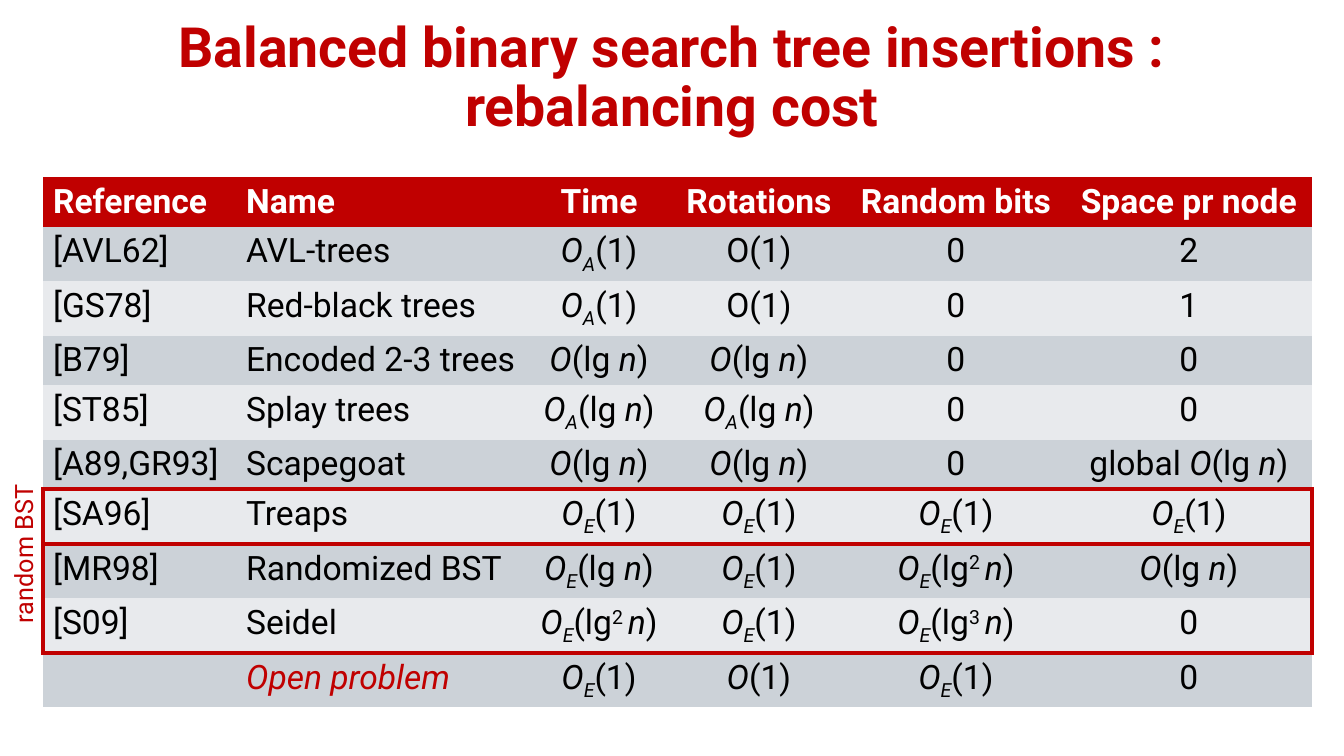
import pptx
import pptx.dml.color
import pptx.enum.text
import pptx.oxml
import pptx.oxml.ns
import pptx.util

PX = 914400 / 100.8
FONT = "Roboto"
RED = pptx.dml.color.RGBColor(0xC0, 0x00, 0x00)
WHITE = pptx.dml.color.RGBColor(0xFF, 0xFF, 0xFF)
BLACK = pptx.dml.color.RGBColor(0x00, 0x00, 0x00)
DARK_BAND = pptx.dml.color.RGBColor(0xCC, 0xD2, 0xD8)
LIGHT_BAND = pptx.dml.color.RGBColor(0xE8, 0xEA, 0xED)
CENTER = pptx.enum.text.PP_ALIGN.CENTER
MIDDLE = pptx.enum.text.MSO_ANCHOR.MIDDLE
NO_GRID_STYLE = "{2D5ABB26-0587-4C30-8999-92F81FD0307C}"

COLUMN_WIDTHS = [193, 290, 146, 174, 220, 246]
ROW_HEIGHT = 41
RANDOM_ROWS = range(6, 9)


def px(length):
    return pptx.util.Emu(round(length * PX))


def bound(argument="1", model="", power=""):
    runs = [("O", True, 0)]
    if model:
        runs.append((model, True, -25))
    if argument == "1":
        return runs + [("(1)", False, 0)]
    if power:
        runs += [("(lg", False, 0), (power + " ", False, 30)]
    else:
        runs.append(("(lg ", False, 0))
    return runs + [("n", True, 0), (")", False, 0)]


AMORTIZED = bound("1", "A")
EXPECTED = bound("1", "E")
LOG = bound("lg n")
AMORTIZED_LOG = bound("lg n", "A")
EXPECTED_LOG = bound("lg n", "E")
EXPECTED_LOG2 = bound("lg n", "E", "2")
EXPECTED_LOG3 = bound("lg n", "E", "3")

COSTS = [
    ["Reference", "Name", "Time", "Rotations", "Random bits", "Space pr node"],
    ["[AVL62]", "AVL-trees", AMORTIZED, "O(1)", "0", "2"],
    ["[GS78]", "Red-black trees", AMORTIZED, "O(1)", "0", "1"],
    ["[B79]", "Encoded 2-3 trees", LOG, LOG, "0", "0"],
    ["[ST85]", "Splay trees", AMORTIZED_LOG, AMORTIZED_LOG, "0", "0"],
    ["[A89,GR93]", "Scapegoat", LOG, LOG, "0", [("global ", False, 0)] + LOG],
    ["[SA96]", "Treaps", EXPECTED, EXPECTED, EXPECTED, EXPECTED],
    ["[MR98]", "Randomized BST", EXPECTED_LOG, EXPECTED, EXPECTED_LOG2, LOG],
    ["[S09]", "Seidel", EXPECTED_LOG2, EXPECTED, EXPECTED_LOG3, "0"],
    ["", [("Open problem", True, 0)], EXPECTED, bound(), EXPECTED, "0"],
]


def add_run(paragraph, text, size, color, bold=False, italic=False, baseline=0):
    run = paragraph.add_run()
    run.text = text
    font = run.font
    font.name, font.size = FONT, pptx.util.Pt(size)
    font.bold, font.italic = bold, italic
    font.color.rgb = color
    if baseline:
        run._r.get_or_add_rPr().set("baseline", str(baseline * 1000))


def place_title(slide, left, top, width, height):
    title = slide.shapes.title
    title.left, title.top = px(left), px(top)
    title.width, title.height = px(width), px(height)
    frame = title.text_frame
    frame.word_wrap = True
    frame.auto_size = pptx.enum.text.MSO_AUTO_SIZE.NONE
    frame.vertical_anchor = MIDDLE
    heading = frame.paragraphs[0]
    heading.alignment = CENTER
    heading.line_spacing = 0.9
    add_run(heading, "Balanced binary search tree insertions :", 39.6, RED, bold=True)
    heading.add_line_break()
    add_run(heading, "rebalancing cost", 39.6, RED, bold=True)


def frame_sides(row, column):
    sides = []
    if row in RANDOM_ROWS and column == 0:
        sides.append("L")
    if row in RANDOM_ROWS and column == len(COLUMN_WIDTHS) - 1:
        sides.append("R")
    if row in (RANDOM_ROWS.start, RANDOM_ROWS.stop):
        sides.append("T")
    if row in (RANDOM_ROWS.start - 1, RANDOM_ROWS.stop - 1):
        sides.append("B")
    return sides


def draw_borders(cell, sides):
    properties = cell._tc.get_or_add_tcPr()
    for side in sides:
        properties.append(pptx.oxml.parse_xml(
            f'<a:ln{side} {pptx.oxml.ns.nsdecls("a")} w="{pptx.util.Pt(3)}">'
            f'<a:solidFill><a:srgbClr val="{RED}"/></a:solidFill></a:ln{side}>'))


def fill_cell(cell, content, row, column):
    is_header = row == 0
    is_open_problem = row == len(COSTS) - 1 and column == 1
    draw_borders(cell, frame_sides(row, column))
    cell.fill.solid()
    cell.fill.fore_color.rgb = RED if is_header else DARK_BAND if row % 2 else LIGHT_BAND
    color = WHITE if is_header else RED if is_open_problem else BLACK
    entry = cell.text_frame.paragraphs[0]
    if column > 1:
        entry.alignment = CENTER
    runs = [(content, False, 0)] if isinstance(content, str) else content
    for text, italic, baseline in runs:
        if text:
            add_run(entry, text, 24, color, is_header, italic, baseline)


def place_costs(slide, left, top):
    costs = slide.shapes.add_table(
        len(COSTS), len(COLUMN_WIDTHS), px(left), px(top),
        px(sum(COLUMN_WIDTHS)), px(ROW_HEIGHT * len(COSTS))).table
    costs.horz_banding = False
    costs.first_row = False
    costs._tbl.tblPr.find(pptx.oxml.ns.qn("a:tableStyleId")).text = NO_GRID_STYLE
    for column, width in zip(costs.columns, COLUMN_WIDTHS):
        column.width = px(width)
    for row, contents in enumerate(COSTS):
        costs.rows[row].height = px(ROW_HEIGHT)
        for column, content in enumerate(contents):
            fill_cell(costs.cell(row, column), content, row, column)


def place_group_label(slide, left, top, width, height):
    label = slide.shapes.add_textbox(
        px(left + (width - height) / 2), px(top + (height - width) / 2),
        px(height), px(width))
    label.rotation = 270
    label.text_frame.word_wrap = True
    caption = label.text_frame.paragraphs[0]
    caption.alignment = CENTER
    add_run(caption, "random BST", 18, RED)


def main():
    deck = pptx.Presentation()
    deck.slide_width, deck.slide_height = px(1344), px(756)
    slide = deck.slides.add_slide(deck.slide_layouts.get_by_name("Title Only"))
    place_title(slide, 0, 6, 1344, 146)
    place_costs(slide, 43, 177)
    place_group_label(slide, 3, 378, 40, 352)
    deck.save("out.pptx")


if __name__ == "__main__":
    main()
